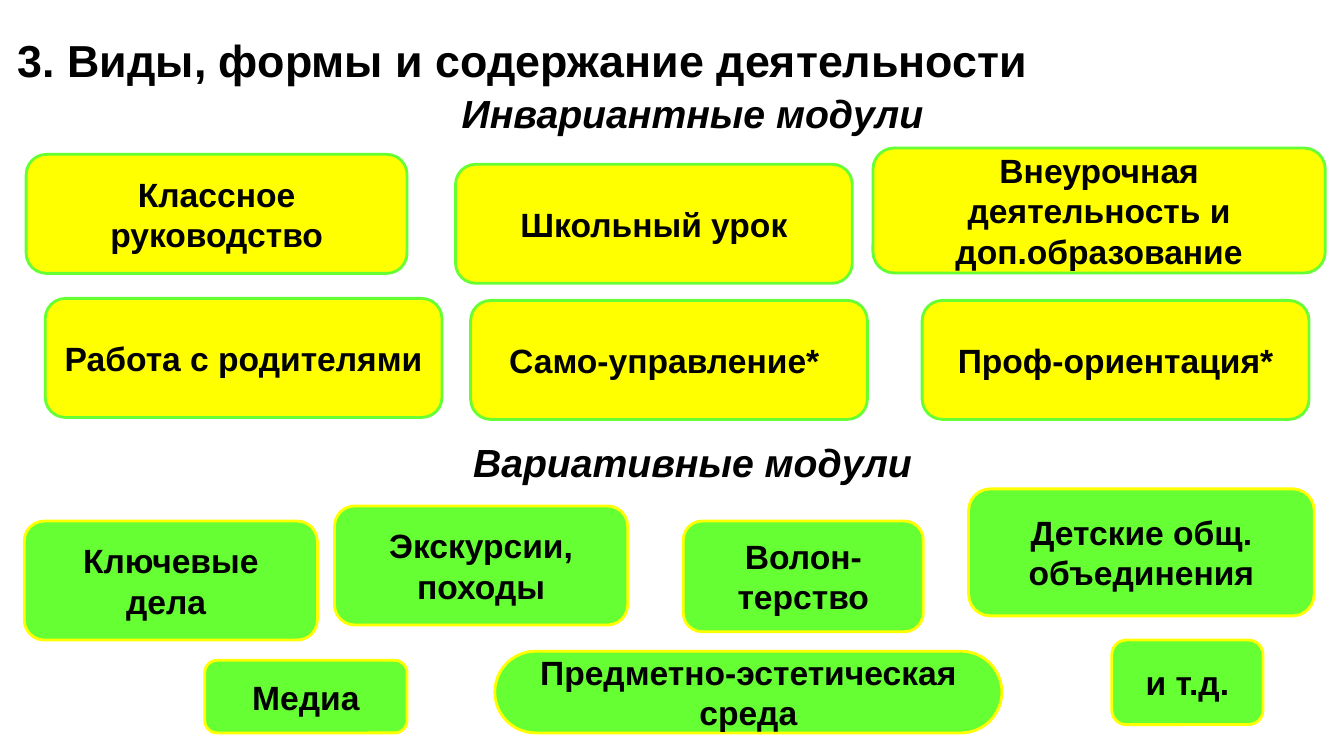
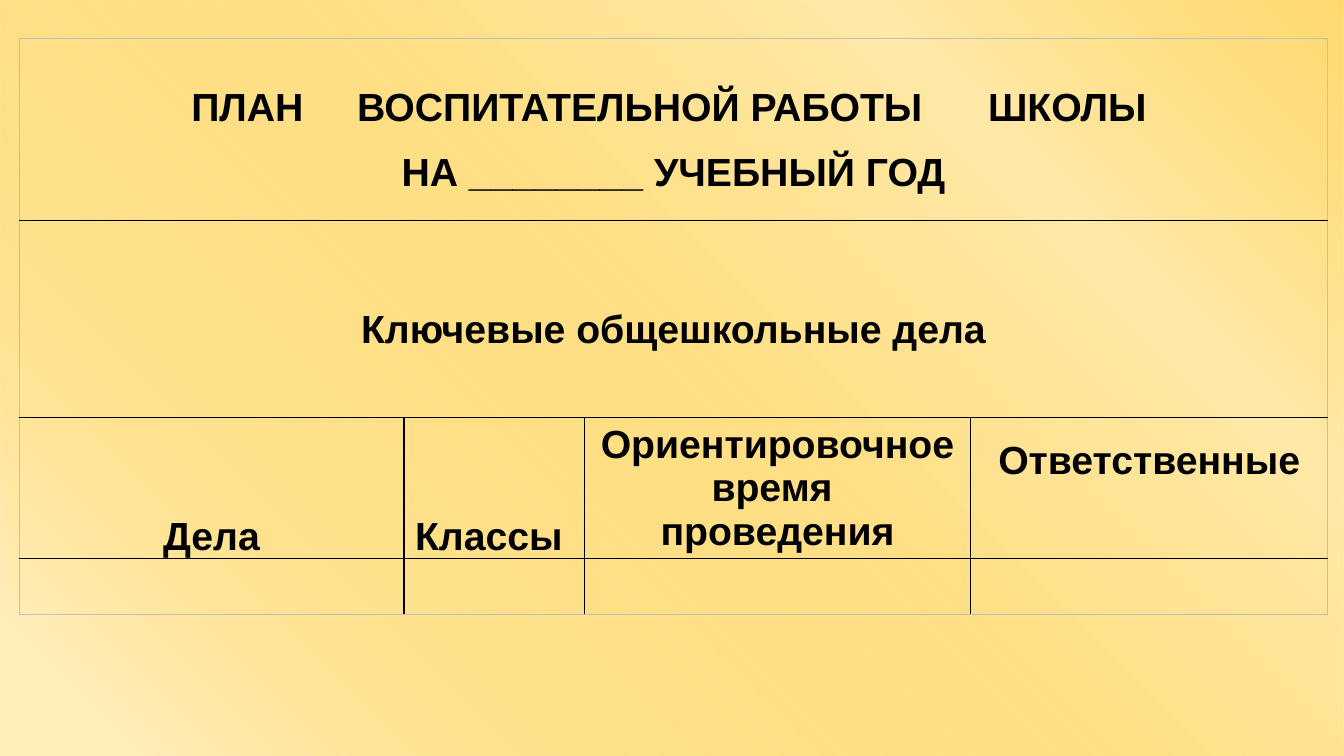
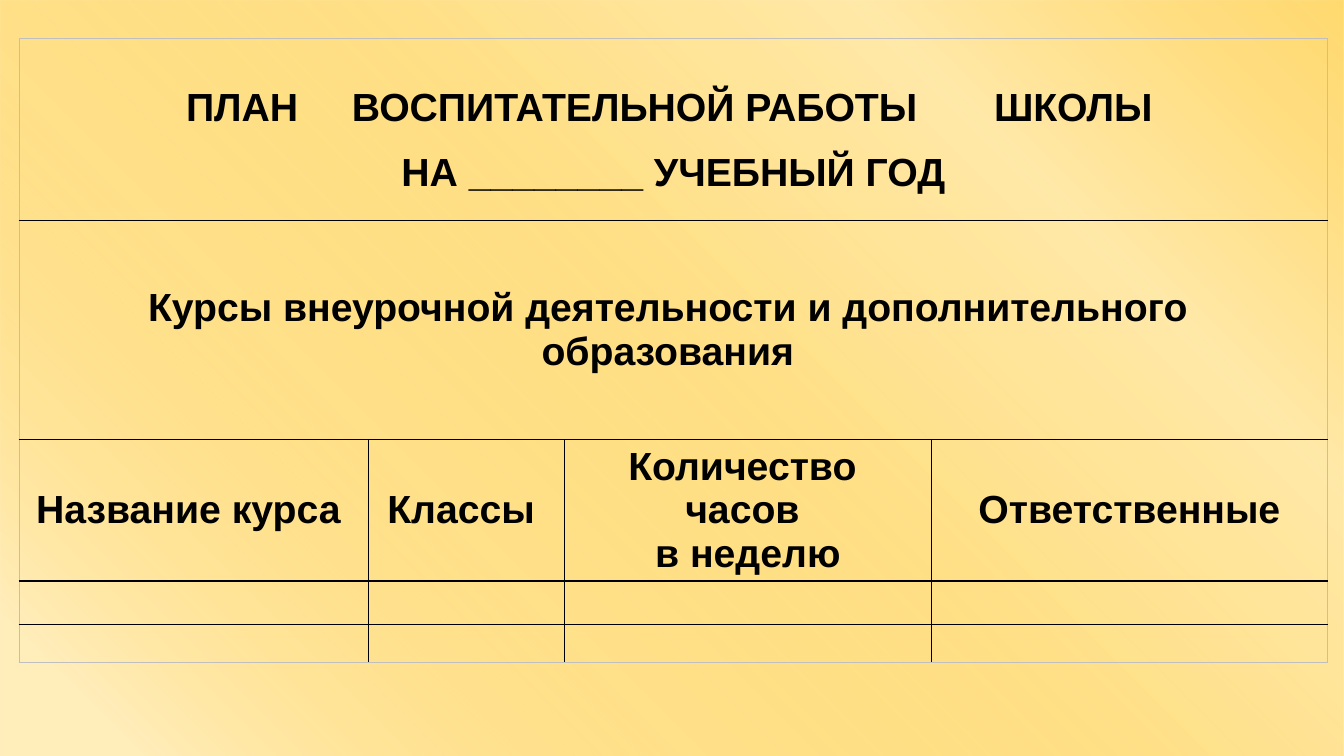
from dataclasses import dataclass

from lxml.etree import SubElement
from pptx import Presentation
from pptx.dml.color import RGBColor
from pptx.enum.shapes import MSO_SHAPE
from pptx.enum.text import MSO_ANCHOR, PP_ALIGN
from pptx.oxml import parse_xml
from pptx.oxml.ns import nsdecls, qn
from pptx.slide import Slide
from pptx.table import _Cell
from pptx.text.text import _Paragraph
from pptx.util import Cm, Pt

FONT = "Arial"
BLACK, YELLOW, GREEN, GREY = "000000", "FFFF00", "66FF33", "BFBFBF"
SLIDE_WIDTH, SLIDE_HEIGHT = 33.87, 19.05
# position, colour, opacity (all in percent except the colour)
GOLD_STOPS = [
    (7, "FFCC3B", 35),
    (33, "FFE18B", 100),
    (55, "FFD458", 71),
    (77, "FFE18B", 74),
    (100, "FFC625", 66),
]


@dataclass
class Module:
    text: str
    left: float
    top: float
    width: float
    height: float = 3.0
    rounding: float = 0.17


@dataclass
class Heading:
    text: str
    left: float
    top: float
    width: float
    height: float
    size: int = 28
    italic: bool = True
    align: PP_ALIGN = PP_ALIGN.CENTER


@dataclass
class HeaderCell:
    lines: list[str]
    anchor: MSO_ANCHOR = MSO_ANCHOR.MIDDLE
    spacing: float = 1.0


@dataclass
class Plan:
    title_tabs: list[float]
    subject: HeaderCell
    header: list[HeaderCell]
    columns: list[float]
    rows: list[float]


INVARIANT = [
    Module("Классное руководство", 0.66, 3.89, 9.6),
    Module("Школьный урок", 11.48, 4.14, 10),
    Module("Внеурочная деятельность и доп.образование", 22, 3.73, 11.4, 3.15),
    Module("Работа с родителями", 1.14, 7.52, 10),
    Module("Само-управление* ", 11.86, 7.57, 10),
    Module("Проф-ориентация*", 23.24, 7.57, 9.75),
]
VARIABLE = [
    Module("Ключевые дела ", 0.61, 13.13, 7.39),
    Module("Экскурсии, походы", 8.43, 12.75, 7.39),
    Module("Волон-терство", 17.22, 13.13, 6.05, 2.79),
    Module("Детские общ. объединения", 24.41, 12.32, 8.71, 3.2),
    Module("Медиа", 5.16, 16.64, 5.1, 1.83),
    Module("Предметно-эстетическая среда", 12.47, 16.41, 12.78, 2.06, 0.5),
    Module("и т.д.", 28.02, 16.13, 3.81, 2.13),
]
HEADINGS = [
    Heading("3. Виды, формы и содержание деятельности", 0.2, 0.71, 33.48, 1.63,
            32, False, PP_ALIGN.LEFT),
    Heading("Инвариантные модули", 9.2, 2.13, 16.5, 1.45),
    Heading("Вариативные модули", 9.2, 10.92, 16.5, 1.45),
]
BOTTOM = MSO_ANCHOR.BOTTOM
PLANS = [
    Plan(
        [4.16, 8.34, 24.24],
        HeaderCell(["Ключевые общешкольные дела"], spacing=1.5),
        [
            HeaderCell(["Дела"], BOTTOM, 1.5),
            HeaderCell(["Классы "], BOTTOM, 1.5),
            HeaderCell(["Ориентировочное", "время ", "проведения"]),
            HeaderCell(["Ответственные"], MSO_ANCHOR.TOP, 1.5),
        ],
        [9.7, 4.55, 9.73, 9],
        [4.59, 4.96, 3.3, 1.41],
    ),
    Plan(
        [4.03, 8.21, 24.39],
        HeaderCell(["Курсы внеурочной деятельности и дополнительного ", "образования "]),
        [
            HeaderCell(["Название курса "]),
            HeaderCell(["Классы "]),
            HeaderCell(["Количество ", "часов ", "в неделю"]),
            HeaderCell(["Ответственные"]),
        ],
        [8.81, 4.93, 9.25, 9.98],
        [4.59, 5.52, 3.3, 1.1, 0.95],
    ),
]


def color(value: str) -> RGBColor:
    return RGBColor.from_string(value)


def add_span(para: _Paragraph, text: str, size: int, italic: bool = False) -> None:
    span = para.add_run()
    span.text = text
    font = span.font
    font.name, font.size, font.bold, font.italic = FONT, Pt(size), True, italic
    font.color.rgb = color(BLACK)


def add_heading(page: Slide, heading: Heading) -> None:
    box = page.shapes.add_textbox(
        Cm(heading.left), Cm(heading.top), Cm(heading.width), Cm(heading.height))
    box.text_frame.word_wrap = True
    para = box.text_frame.paragraphs[0]
    para.alignment = heading.align
    add_span(para, heading.text, heading.size, heading.italic)


def add_module(page: Slide, module: Module, fill: str, outline: str) -> None:
    box = page.shapes.add_shape(
        MSO_SHAPE.ROUNDED_RECTANGLE,
        Cm(module.left), Cm(module.top), Cm(module.width), Cm(module.height))
    box.shadow.inherit = False
    box.adjustments[0] = module.rounding
    box.fill.solid()
    box.fill.fore_color.rgb = color(fill)
    box.line.color.rgb = color(outline)
    box.line.width = Pt(2)
    frame = box.text_frame
    frame.word_wrap = True
    frame.vertical_anchor = MSO_ANCHOR.MIDDLE
    para = frame.paragraphs[0]
    para.alignment = PP_ALIGN.CENTER
    add_span(para, module.text, 24)


def add_gold_background(page: Slide) -> None:
    """Cover the page with a gradient that spreads from the bottom left corner."""
    panel = page.shapes.add_shape(
        MSO_SHAPE.RECTANGLE, 0, 0, Cm(SLIDE_WIDTH), Cm(SLIDE_HEIGHT))
    panel.shadow.inherit = False
    panel.line.fill.background()
    stops = "".join(
        f'<a:gs pos="{place * 1000}"><a:srgbClr val="{tint}">'
        f'<a:alpha val="{opacity * 1000}"/></a:srgbClr></a:gs>'
        for place, tint, opacity in GOLD_STOPS)
    gradient = parse_xml(
        f'<a:gradFill {nsdecls("a")} rotWithShape="1"><a:gsLst>{stops}</a:gsLst>'
        '<a:path path="circle"><a:fillToRect t="100000" r="100000"/></a:path>'
        '</a:gradFill>')
    panel.element.spPr.find(qn("a:prstGeom")).addnext(gradient)


def set_borders(cell: _Cell, sides: dict[str, bool]) -> None:
    """Draw each side grey if it lies on the table's outer edge, else black."""
    properties = cell._tc.get_or_add_tcPr()
    for place, (side, outer) in enumerate(sides.items()):
        tint, width = (GREY, 0.5) if outer else (BLACK, 1)
        properties.insert(place, parse_xml(
            f'<a:{side} {nsdecls("a")} w="{Pt(width)}"><a:solidFill>'
            f'<a:srgbClr val="{tint}"/></a:solidFill></a:{side}>'))


def write_cell(cell: _Cell, content: HeaderCell) -> None:
    cell.vertical_anchor = content.anchor
    frame = cell.text_frame
    for index, line in enumerate(content.lines):
        para = frame.add_paragraph() if index else frame.paragraphs[0]
        para.alignment = PP_ALIGN.CENTER
        para.line_spacing = content.spacing
        add_span(para, line, 28)


def set_tabs(para: _Paragraph, places: list[float]) -> None:
    para.alignment = PP_ALIGN.LEFT
    tabs = SubElement(para._p.get_or_add_pPr(), qn("a:tabLst"))
    for place in places:
        SubElement(tabs, qn("a:tab"), pos=str(Cm(place)), algn="l")


def add_plan(page: Slide, plan: Plan) -> None:
    row_count, column_count = len(plan.rows), len(plan.columns)
    table = page.shapes.add_table(
        row_count, column_count, Cm(0.48), Cm(0.97),
        Cm(sum(plan.columns)), Cm(sum(plan.rows))).table
    table.first_row = table.horz_banding = False
    for column, width in zip(table.columns, plan.columns):
        column.width = Cm(width)
    for row, height in zip(table.rows, plan.rows):
        row.height = Cm(height)
    for r in range(row_count):
        for c in range(column_count):
            cell = table.cell(r, c)
            cell.margin_left = cell.margin_right = Cm(0.18)
            cell.margin_top = cell.margin_bottom = 0
            cell.fill.background()
            full_width = r < 2
            set_borders(cell, {
                "lnL": full_width or c == 0,
                "lnR": full_width or c == column_count - 1,
                "lnT": r == 0,
                "lnB": r == row_count - 1,
            })
    for r in range(2):
        table.cell(r, 0).merge(table.cell(r, column_count - 1))
    title = table.cell(0, 0)
    write_cell(title, HeaderCell(
        ["\tПЛАН\tВОСПИТАТЕЛЬНОЙ РАБОТЫ\tШКОЛЫ", "НА ________ УЧЕБНЫЙ ГОД"], spacing=1.5))
    set_tabs(title.text_frame.paragraphs[0], plan.title_tabs)
    write_cell(table.cell(1, 0), plan.subject)
    for c, content in enumerate(plan.header):
        write_cell(table.cell(2, c), content)


def main() -> None:
    deck = Presentation()
    deck.slide_width, deck.slide_height = Cm(SLIDE_WIDTH), Cm(SLIDE_HEIGHT)
    blank = deck.slide_layouts[6]

    page = deck.slides.add_slide(blank)
    for heading in HEADINGS:
        add_heading(page, heading)
    for module in INVARIANT:
        add_module(page, module, YELLOW, GREEN)
    for module in VARIABLE:
        add_module(page, module, GREEN, YELLOW)

    for plan in PLANS:
        page = deck.slides.add_slide(blank)
        add_gold_background(page)
        add_plan(page, plan)
    deck.save("out.pptx")


if __name__ == "__main__":
    main()
